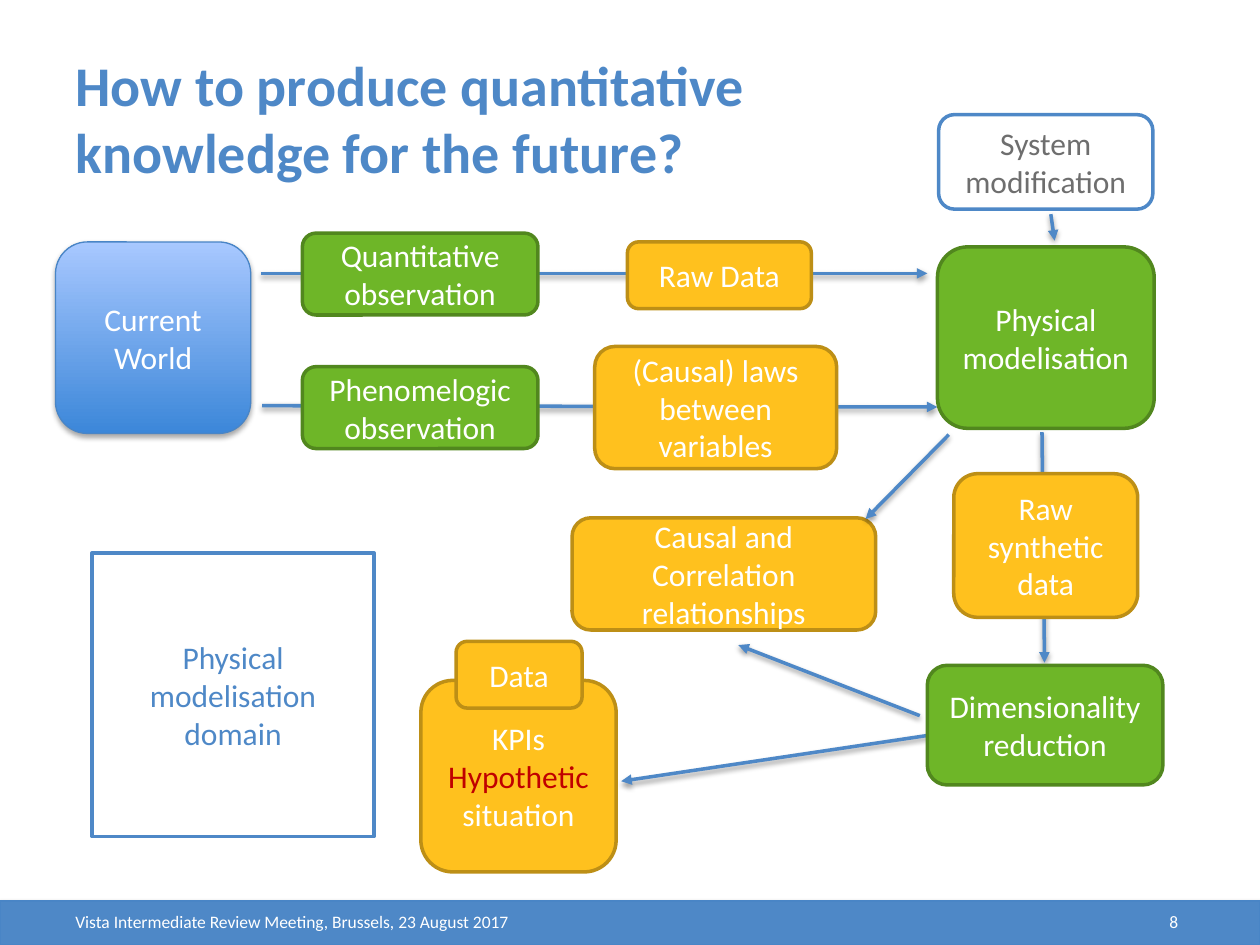
import pptx
import pptx.util
from lxml import etree
from pptx.dml.color import RGBColor
from pptx.enum.shapes import MSO_CONNECTOR, MSO_SHAPE
from pptx.enum.text import MSO_ANCHOR, MSO_AUTO_SIZE, PP_ALIGN
from pptx.oxml.ns import qn

PX = 9144
FONT = "Calibri"
BLUE = RGBColor(0x4E, 0x88, 0xC7)
EDGE_BLUE = RGBColor(0x49, 0x85, 0xC6)
DEEP_BLUE = RGBColor(0x3C, 0x87, 0xD9)
PALE_BLUE = RGBColor(0xA8, 0xC8, 0xFF)
GREEN = RGBColor(0x6E, 0xB6, 0x28)
DARK_GREEN = RGBColor(0x51, 0x87, 0x1E)
AMBER = RGBColor(0xFF, 0xC1, 0x1E)
DARK_AMBER = RGBColor(0xBD, 0x8F, 0x16)
RED = RGBColor(0xC0, 0x00, 0x00)
GREY = RGBColor(0x6E, 0x6E, 0x6E)
WHITE = RGBColor(0xFF, 0xFF, 0xFF)
BLACK = RGBColor(0x00, 0x00, 0x00)

STYLES = {
    "world": dict(fill=[DEEP_BLUE, PALE_BLUE], line=EDGE_BLUE, width=0.75, shadow=True),
    "step": dict(fill=GREEN, line=DARK_GREEN),
    "data": dict(fill=AMBER, line=DARK_AMBER),
    "change": dict(fill=WHITE, line=BLUE, color=GREY),
    "domain": dict(fill=WHITE, line=BLUE, color=BLUE, kind=MSO_SHAPE.RECTANGLE),
    "bar": dict(fill=BLUE, line=EDGE_BLUE, width=0.75, shadow=True, kind=MSO_SHAPE.RECTANGLE),
}
NODES = [
    ("world", (44, 192, 155, 152), "Current\nWorld"),
    ("data", (334, 540, 155, 152), "KPIs\n|Hypothetic| situation"),
    ("data", (362, 509, 100, 53), "Data"),
    ("step", (240, 185, 187, 65), "Quantitative observation"),
    ("data", (498, 192, 146, 53), "Raw Data"),
    ("step", (744, 196, 172, 144), "Physical\nmodelisation"),
    ("data", (757, 376, 146, 114), "Raw synthetic\ndata"),
    ("step", (240, 291, 187, 65), "Phenomelogic observation"),
    ("data", (472, 275, 192, 97), "(Causal) laws between variables"),
    ("step", (736, 528, 187, 95), "Dimensionality\vreduction"),
    ("change", (745, 91, 170, 75), "System modification"),
    ("domain", (73, 439, 224, 225), "Physical modelisation domain"),
    ("data", (454, 411, 241, 89), "Causal and Correlation relationships"),
]
LINKS_BEHIND = [(827, 343, 829, 526), (207, 217, 736, 217),
                (761, 580, 493, 620), (208, 322, 744, 323)]
LINKS_FRONT = [(834, 170, 837, 191), (753, 345, 687, 412), (730, 568, 586, 512)]


def place(box, x, y, w, h):
    """Turn px relative to a box into EMU on the slide."""
    return (box[0] + x) * PX, (box[1] + y) * PX, w * PX, h * PX


def write(tf, text, size, color, align, bold=False, accent=RED):
    """Fill a text frame; pieces between bars take the accent colour."""
    tf.word_wrap = True
    tf.auto_size = MSO_AUTO_SIZE.NONE
    tf.vertical_anchor = MSO_ANCHOR.MIDDLE
    for i, row in enumerate(text.split("\n")):
        p = tf.paragraphs[0] if i == 0 else tf.add_paragraph()
        p.alignment = align
        for j, piece in enumerate(row.split("|")):
            for k, part in enumerate(piece.split("\v")):
                if k:
                    p.add_line_break()
                if not part:
                    continue
                r = p.add_run()
                r.text = part
                form = dict(name=FONT, size=pptx.util.Pt(size), bold=bold)
                for key, value in form.items():
                    setattr(r.font, key, value)
                r.font.color.rgb = accent if j % 2 else color


def add_shadow(sp, distance, alpha):
    """Give a shape or connector a soft shadow straight below it."""
    effects = etree.SubElement(sp._element.spPr, qn("a:effectLst"))
    shade = etree.SubElement(effects, qn("a:outerShdw"), blurRad="39370", dir="5400000",
                             dist=str(int(pptx.util.Pt(distance))), rotWithShape="0")
    clr = etree.SubElement(shade, qn("a:srgbClr"), val=str(BLACK))
    etree.SubElement(clr, qn("a:alpha"), val=str(alpha * 1000))


def add_node(s, at, text, fill, line, width=2, color=WHITE, shadow=False,
             kind=MSO_SHAPE.ROUNDED_RECTANGLE):
    """Draw one box with centred text."""
    sp = s.shapes.add_shape(kind, *at)
    if isinstance(fill, list):
        sp.fill.gradient()
        sp.fill.gradient_angle = 90
        for stop, tone in zip(sp.fill.gradient_stops, fill):
            stop.color.rgb = tone
    else:
        sp.fill.solid()
        sp.fill.fore_color.rgb = fill
    sp.line.color.rgb = line
    sp.line.width = pptx.util.Pt(width)
    if shadow:
        add_shadow(sp, 1.8, 35)
    else:
        sp.shadow.inherit = False
    write(sp.text_frame, text, 18, color, PP_ALIGN.CENTER)


def add_link(s, box, x1, y1, x2, y2):
    """Draw one arrow between two points of a box."""
    start = place(box, x1, y1, 0, 0)[:2]
    end = place(box, x2, y2, 0, 0)[:2]
    sp = s.shapes.add_connector(MSO_CONNECTOR.STRAIGHT, *start, *end)
    sp.line.color.rgb = BLUE
    sp.line.width = pptx.util.Pt(2)
    etree.SubElement(sp.line._get_or_add_ln(), qn("a:tailEnd"), type="triangle")
    add_shadow(sp, 1.6, 38)


def build_title(s, box):
    """Place and format the slide title."""
    sp = s.shapes.title
    form = dict(zip(("left", "top", "width", "height"), place(box, 0, 0, *box[2:])))
    for key, value in form.items():
        setattr(sp, key, value)
    write(sp.text_frame, "How to produce quantitative knowledge for the future?",
          32, BLUE, PP_ALIGN.LEFT, bold=True)


def build_diagram(s, box):
    """Draw the flow from the current world to the indicators."""
    for link in LINKS_BEHIND:
        add_link(s, box, *link)
    for style, at, text in NODES:
        add_node(s, place(box, *at), text, **STYLES[style])
    for link in LINKS_FRONT:
        add_link(s, box, *link)


def build_footer(s, box):
    """Draw the bottom bar with the meeting and the slide number."""
    add_node(s, place(box, 0, 0, *box[2:]), "", **STYLES["bar"])
    notes = [(50, 426, "Vista Intermediate Review Meeting, Brussels, 23 August 2017", PP_ALIGN.LEFT),
             (712, 233, "8", PP_ALIGN.RIGHT)]
    for x, w, text, align in notes:
        sp = s.shapes.add_textbox(*place(box, x, 2, w, 28))
        write(sp.text_frame, text, 10, WHITE, align)


def main():
    """Build the slide and save it."""
    prs = pptx.Presentation()
    prs.slide_width, prs.slide_height = 1000 * PX, 750 * PX
    s = prs.slides.add_slide(prs.slide_layouts[5])
    build_footer(s, (0, 715, 1000, 35))
    build_title(s, (50, 31, 728, 125))
    build_diagram(s, (0, 0, 1000, 715))
    prs.save("out.pptx")


if __name__ == "__main__":
    main()
